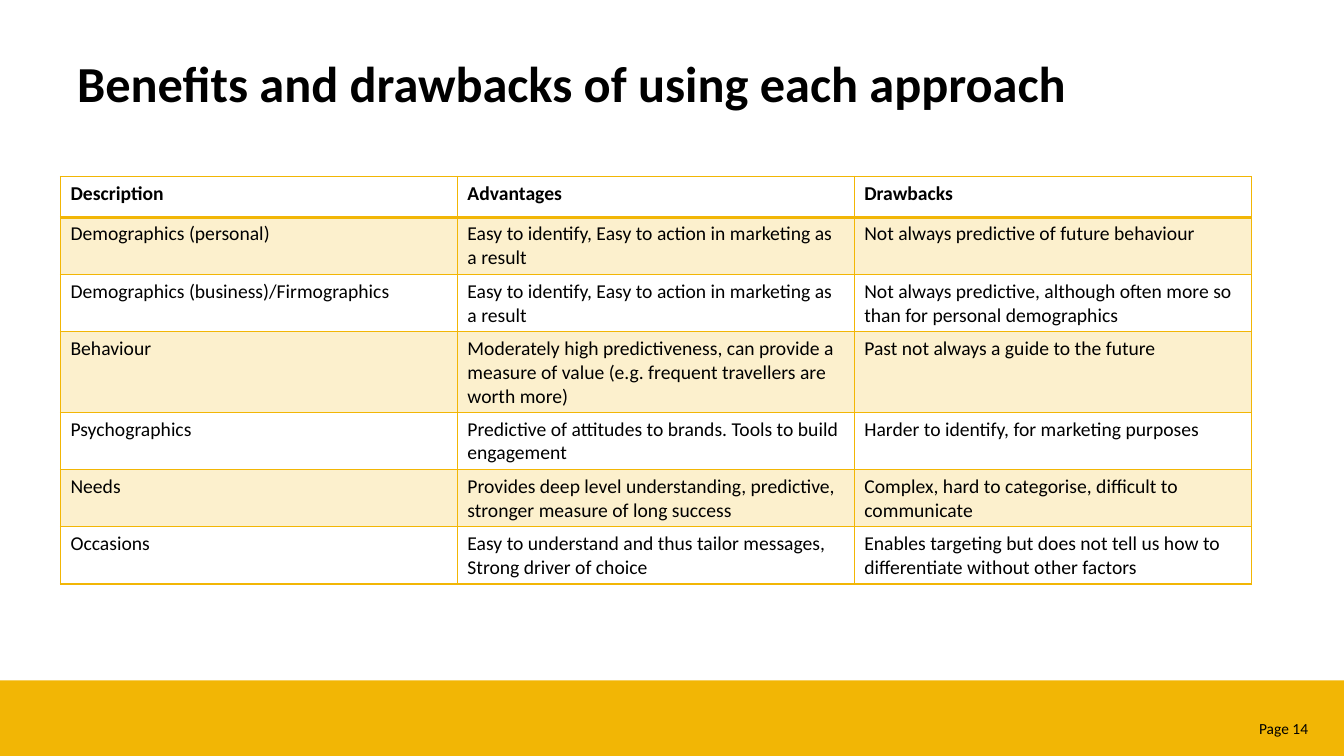
from lxml import etree
from pptx import Presentation
from pptx.dml import color
from pptx.enum import shapes, text
from pptx.oxml import ns
from pptx.util import Pt

GOLD = color.RGBColor(0xF2, 0xB6, 0x05)
BLACK = color.RGBColor(0, 0, 0)
FONT = "Calibri"
PAGE_WIDTH, PAGE_HEIGHT = 960, 540

ROWS = [
    ("Description", "Advantages", "Drawbacks"),
    ("Demographics (personal)",
     "Easy to identify, Easy to action in marketing as a result",
     "Not always predictive of future behaviour"),
    ("Demographics (business)/Firmographics",
     "Easy to identify, Easy to action in marketing as a result",
     "Not always predictive, although often more so than for personal demographics"),
    ("Behaviour",
     "Moderately high predictiveness, can provide a measure of value "
     "(e.g. frequent travellers are worth more)",
     "Past not always a guide to the future"),
    ("Psychographics",
     "Predictive of attitudes to brands. Tools to build engagement",
     "Harder to identify, for marketing purposes"),
    ("Needs",
     "Provides deep level understanding, predictive, stronger measure of long success",
     "Complex, hard to categorise, difficult to communicate"),
    ("Occasions",
     "Easy to understand and thus tailor messages, Strong driver of choice",
     "Enables targeting but does not tell us how to differentiate without other factors"),
]


def write(frame, words, size, bold=False, align=text.PP_ALIGN.LEFT):
    """Put one formatted paragraph into a text frame."""
    para = frame.paragraphs[0]
    para.alignment = align
    span = para.add_run()
    span.text = words
    span.font.name = FONT
    span.font.size = Pt(size)
    span.font.bold = bold
    span.font.color.rgb = BLACK


def add_text(page, left, top, width, height, words, anchor=text.MSO_ANCHOR.TOP, **style):
    box = page.shapes.add_textbox(Pt(left), Pt(top), Pt(width), Pt(height))
    box.text_frame.word_wrap = True
    box.text_frame.vertical_anchor = anchor
    write(box.text_frame, words, **style)


def style_cell(cell, shaded, top_line, bottom_line):
    """Set the fill and the four borders of a table cell."""
    properties = cell._tc.get_or_add_tcPr()
    if shaded:
        cell.fill.solid()
        cell.fill.fore_color.rgb = GOLD
        tone = properties.find(".//" + ns.qn("a:srgbClr"))
        etree.SubElement(tone, ns.qn("a:alpha"), val="20000")
    else:
        cell.fill.background()
    # Borders come before the fill in the cell properties
    borders = {"lnL": 1, "lnR": 1, "lnT": top_line, "lnB": bottom_line}
    for place, (side, weight) in enumerate(borders.items()):
        line = etree.Element(ns.qn("a:" + side), w=str(Pt(weight)))
        fill = etree.SubElement(line, ns.qn("a:solidFill"))
        etree.SubElement(fill, ns.qn("a:srgbClr"), val=str(GOLD))
        properties.insert(place, line)


def add_footer(page, left, top, width, height):
    band = page.shapes.add_shape(
        shapes.MSO_SHAPE.RECTANGLE, Pt(left), Pt(top), Pt(width), Pt(height))
    band.shadow.inherit = False
    band.fill.solid()
    band.fill.fore_color.rgb = GOLD
    band.line.fill.background()
    add_text(page, left + width - 104, top + 24, 88, 20.6, "Page 14 ",
             size=11, align=text.PP_ALIGN.RIGHT)


def add_comparison(page, left, top, width, row_height):
    count = len(ROWS[0])
    frame = page.shapes.add_table(len(ROWS), count, Pt(left), Pt(top),
                                  Pt(width), Pt(row_height * len(ROWS)))
    table = frame.table
    table.first_row = table.horz_banding = False
    for column in table.columns:
        column.width = Pt(width / count)
    for number, entries in enumerate(ROWS):
        table.rows[number].height = Pt(row_height)
        for place, words in enumerate(entries):
            cell = table.cell(number, place)
            write(cell.text_frame, words, size=14, bold=number == 0)
            style_cell(cell, shaded=number % 2 == 1,
                       top_line=2 if number == 1 else 1,
                       bottom_line=2 if number == 0 else 1)


def main():
    deck = Presentation()
    deck.slide_width, deck.slide_height = Pt(PAGE_WIDTH), Pt(PAGE_HEIGHT)
    page = deck.slides.add_slide(deck.slide_layouts[6])
    # Footer band with page number
    add_footer(page, 0, 486, PAGE_WIDTH, 54)
    # Table of approaches
    add_comparison(page, 43.2, 126, 850.5, 29.2)
    # Title
    add_text(page, 48, 21.6, 864, 75, "Benefits and drawbacks of using each approach",
             anchor=text.MSO_ANCHOR.MIDDLE, size=36, bold=True)
    deck.save("out.pptx")


if __name__ == "__main__":
    main()
